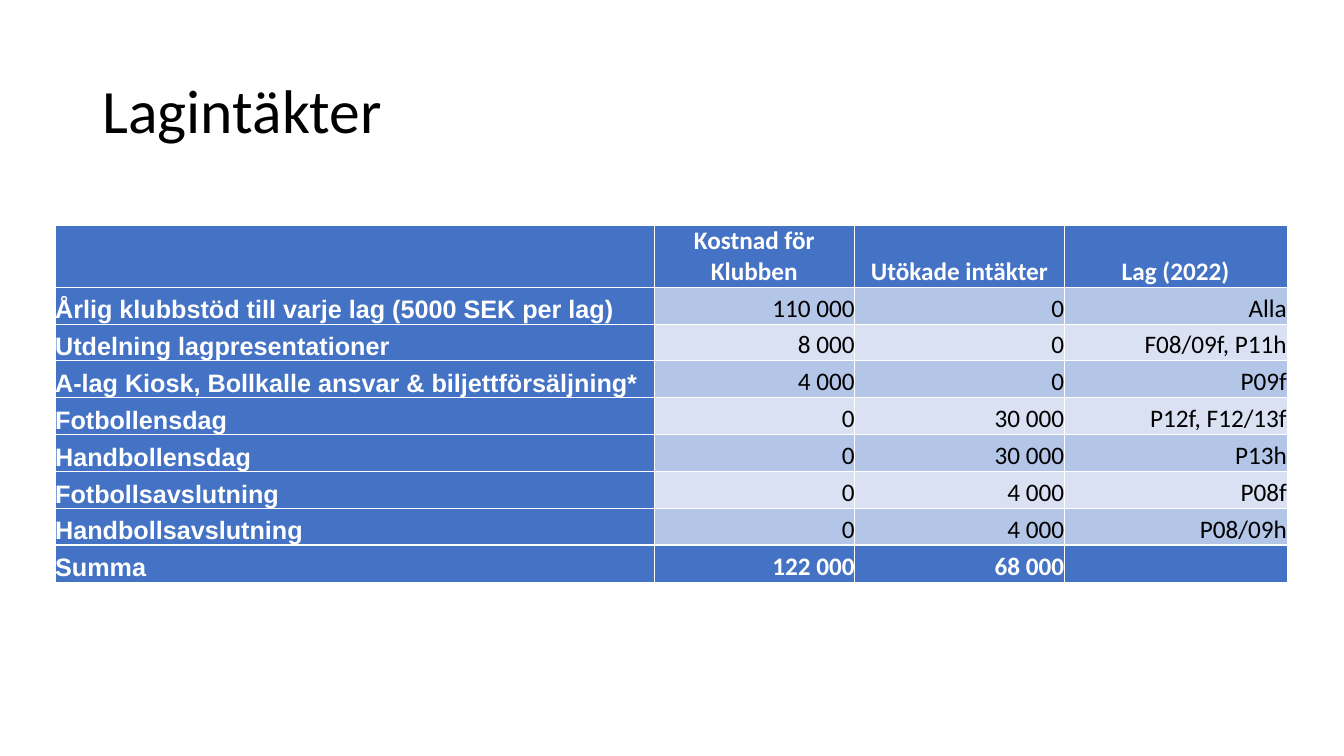
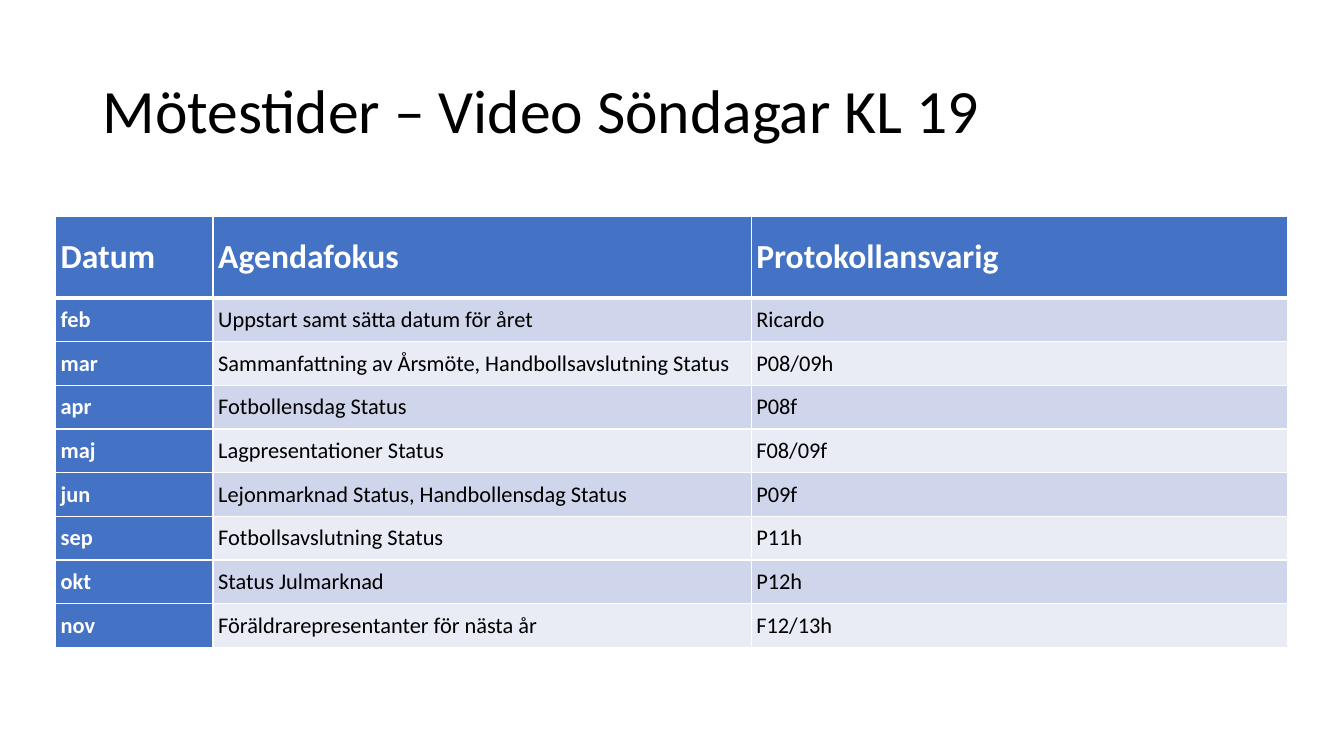
from dataclasses import dataclass

from lxml.etree import SubElement
from pptx import Presentation
from pptx.dml.color import RGBColor
from pptx.enum.text import MSO_ANCHOR as ANCHOR, PP_ALIGN as ALIGN
from pptx.oxml.ns import qn
from pptx.util import Cm, Pt

WHITE = RGBColor(0xFF, 0xFF, 0xFF)
BLACK = RGBColor(0x00, 0x00, 0x00)
BLUE = RGBColor(0x44, 0x72, 0xC4)
INCOME_BANDS = RGBColor(0xB4, 0xC6, 0xE7), RGBColor(0xD9, 0xE1, 0xF2)
MEETING_BANDS = RGBColor(0xCF, 0xD5, 0xEA), RGBColor(0xE9, 0xEB, 0xF5)
FONT = "Calibri"

INCOME = [
    ("", "Kostnad för Klubben", "Utökade intäkter", "Lag (2022)"),
    ("Årlig klubbstöd till varje lag (5000 SEK per lag)", "110 000", "0", "Alla"),
    ("Utdelning lagpresentationer", "8 000", "0", "F08/09f, P11h"),
    ("A-lag Kiosk, Bollkalle ansvar & biljettförsäljning*", "4 000", "0", "P09f"),
    ("Fotbollensdag", "0", "30 000", "P12f, F12/13f"),
    ("Handbollensdag", "0", "30 000", "P13h"),
    ("Fotbollsavslutning", "0", "4 000", "P08f"),
    ("Handbollsavslutning", "0", "4 000", "P08/09h"),
    ("Summa", "122 000", "68 000", ""),
]
MEETINGS = [
    ("Datum", "Agendafokus", "Protokollansvarig"),
    ("feb", "Uppstart samt sätta datum för året", "Ricardo"),
    ("mar", "Sammanfattning av Årsmöte, Handbollsavslutning Status", "P08/09h"),
    ("apr", "Fotbollensdag Status", "P08f"),
    ("maj", "Lagpresentationer Status", "F08/09f"),
    ("jun", "Lejonmarknad Status, Handbollensdag Status", "P09f"),
    ("sep", "Fotbollsavslutning Status", "P11h"),
    ("okt", "Status Julmarknad", "P12h"),
    ("nov", "Föräldrarepresentanter för nästa år", "F12/13h"),
]


@dataclass
class TableStyle:
    """Look of one table; rule_row is the row with a heavy line below it."""
    bands: tuple
    header_size: int
    body_size: int
    label_font: str
    header_align: ALIGN
    value_align: ALIGN
    anchor: ANCHOR
    inset: float
    line: float
    rule: float
    rule_row: int
    total_row: bool


INCOME_STYLE = TableStyle(INCOME_BANDS, 18, 18, "Arial", ALIGN.CENTER, ALIGN.RIGHT,
                          ANCHOR.BOTTOM, 0, 0.5, 1.5, 7, True)
MEETING_STYLE = TableStyle(MEETING_BANDS, 24, 16, FONT, ALIGN.LEFT, ALIGN.LEFT,
                           ANCHOR.MIDDLE, 0.13, 1, 3, 0, False)


def add_slide(prs, title):
    """Add a slide with the shared title style."""
    s = prs.slides.add_slide(prs.slide_layouts[5])
    sp = s.shapes.title
    sp.left, sp.top, sp.width, sp.height = Cm(2.33), Cm(1.01), Cm(29.21), Cm(3.68)
    tf = sp.text_frame
    tf.text = title
    tf.vertical_anchor = ANCHOR.MIDDLE
    p = tf.paragraphs[0]
    p.alignment, p.line_spacing = ALIGN.LEFT, 0.9
    set_font(p, FONT, 44, BLACK, False)
    return s


def set_font(p, name, size, color, bold):
    """Set the font of a paragraph."""
    p.font.name, p.font.size, p.font.bold = name, Pt(size), bold
    p.font.color.rgb = color


def set_borders(cell, top, bottom, side):
    """Draw white cell borders with widths in points."""
    tc_pr = cell._tc.get_or_add_tcPr()
    widths = {"a:lnL": side, "a:lnR": side, "a:lnT": top, "a:lnB": bottom}
    for tag, width in widths.items():
        ln = SubElement(tc_pr, qn(tag), w=str(Pt(width)))
        fill = SubElement(ln, qn("a:solidFill"))
        SubElement(fill, qn("a:srgbClr"), val=str(WHITE))


def format_cell(cell, text, row, col, last, style):
    """Fill and format one table cell according to its place."""
    header, label = row == 0, col == 0
    strong = header or label or (style.total_row and row == last)
    set_borders(cell,
                style.rule if row == style.rule_row + 1 else style.line,
                style.rule if row == style.rule_row else style.line,
                style.line)
    cell.fill.solid()
    cell.fill.fore_color.rgb = BLUE if strong else style.bands[(row - 1) % 2]
    cell.margin_left = cell.margin_right = Cm(style.inset)
    cell.margin_top = cell.margin_bottom = 0
    cell.vertical_anchor = style.anchor
    cell.text = text
    p = cell.text_frame.paragraphs[0]
    if header:
        p.alignment = style.header_align
    else:
        p.alignment = ALIGN.LEFT if label else style.value_align
    set_font(p, style.label_font if label else FONT,
             style.header_size if header else style.body_size,
             WHITE if strong else BLACK, strong)


def add_table(s, data, left, top, widths, header_height, row_height, style):
    """Add a table with a header row, a label column and banded values."""
    heights = [header_height] + [row_height] * (len(data) - 1)
    table = s.shapes.add_table(len(data), len(widths), Cm(left), Cm(top),
                               Cm(sum(widths)), Cm(sum(heights))).table
    table.first_row = table.horz_banding = False
    for column, width in zip(table.columns, widths):
        column.width = Cm(width)
    for row, height in zip(table.rows, heights):
        row.height = Cm(height)
    for i, texts in enumerate(data):
        for j, text in enumerate(texts):
            format_cell(table.cell(i, j), text, i, j, len(data) - 1, style)


def main():
    """Build and save the presentation."""
    prs = Presentation()
    prs.slide_width, prs.slide_height = Cm(33.87), Cm(19.05)
    s = add_slide(prs, "Lagintäkter")
    add_table(s, INCOME, 1.39, 5.67, (15.09, 5.06, 5.28, 5.61), 1.56, 0.93, INCOME_STYLE)
    s = add_slide(prs, "Mötestider – Video Söndagar KL 19")
    add_table(s, MEETINGS, 1.4, 5.46, (3.97, 13.56, 13.51), 2.05, 1.1, MEETING_STYLE)
    prs.save("out.pptx")


if __name__ == "__main__":
    main()
